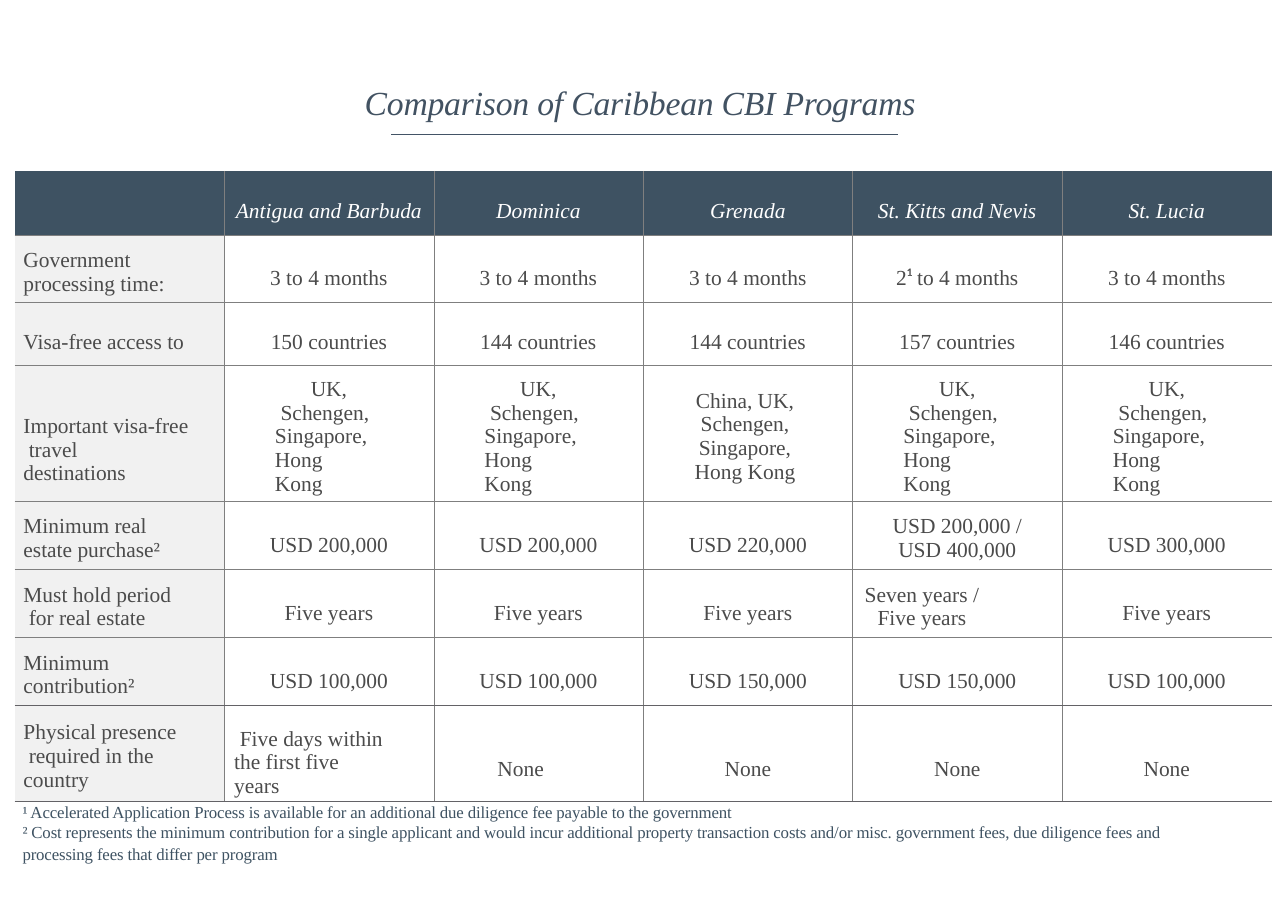
from dataclasses import dataclass
from typing import Optional

from lxml import etree
from pptx import Presentation
from pptx.dml.color import RGBColor
from pptx.enum.shapes import MSO_CONNECTOR
from pptx.enum.text import MSO_ANCHOR, MSO_AUTO_SIZE, PP_ALIGN
from pptx.oxml.ns import qn
from pptx.util import Cm, Pt

LEFT, CENTER = PP_ALIGN.LEFT, PP_ALIGN.CENTER
TOP, MIDDLE = MSO_ANCHOR.TOP, MSO_ANCHOR.MIDDLE
STRAIGHT = MSO_CONNECTOR.STRAIGHT
GROW = MSO_AUTO_SIZE.SHAPE_TO_FIT_TEXT

SERIF, SANS = "Times New Roman", "Calibri"
NAVY, SLATE, RULE = "3E5262", "425262", "435466"
WHITE, GREY, PALE = "FFFFFF", "4B4B4B", "F1F1F1"
GRID, DARK_GRID = "7F7F7F", "636266"


@dataclass(frozen=True)
class Style:
    size: float
    color: str
    italic: bool = False
    spacing: int = 0


@dataclass(frozen=True)
class Passage:
    text: str
    align: PP_ALIGN = CENTER
    margin: float = 0
    first_line: float = 0


@dataclass(frozen=True)
class Entry:
    passages: tuple[Passage, ...]
    lift: Optional[float] = None
    right: float = 0


@dataclass(frozen=True)
class Row:
    height: float
    lift: float
    label: str
    label_lift: float
    entries: tuple[Entry, ...]


TITLE_STYLE = Style(22, SLATE, True, -10)
HEADER_STYLE = Style(14, WHITE, True)
BODY_STYLE = Style(14, GREY)
NOTE_STYLE = Style(11, NAVY, spacing=-10)


def plain(*texts: str) -> tuple[Entry, ...]:
    return tuple(Entry((Passage(text),)) for text in texts)


ISLANDS = plain("Antigua and Barbuda", "Dominica", "Grenada", "St. Kitts and Nevis", "St. Lucia")
MONTHS = plain("3 to 4 months")
FIVE_YEARS = plain("Five years")
NONE = plain("None")
EUROPE_AND_ASIA = Entry((
    Passage("UK,"),
    Passage("Schengen,\nSingapore,\nHong\nKong", LEFT, 1.17, 0.13),
))
CHINA_TOO = Entry((Passage("China, UK,\nSchengen,\nSingapore,\nHong Kong", CENTER, 0.84),), right=0.97)

ROWS = (
    Row(1.47, 11.2, "", 0, ISLANDS),
    Row(1.56, 12.8, "Government\nprocessing time:", 4.4,
        MONTHS * 3 + (Entry((Passage("2¹ to 4 months"),), 12.2),) + MONTHS),
    Row(1.45, 10.7, "Visa-free access to", 10.7,
        plain("150 countries", "144 countries", "144 countries", "157 countries", "146 countries")),
    Row(3.13, 4.5, "Important visa-free\n travel\ndestinations", 22,
        (EUROPE_AND_ASIA,) * 2 + (CHINA_TOO,) + (EUROPE_AND_ASIA,) * 2),
    Row(1.57, 12.9, "Minimum real\nestate purchase²", 4.5,
        plain("USD 200,000", "USD 200,000", "USD 220,000")
        + (Entry((Passage("USD 200,000 /\nUSD 400,000"),), 4.5),) + plain("USD 300,000")),
    Row(1.57, 12.9, "Must hold period\n for real estate", 4.5,
        FIVE_YEARS * 3
        + (Entry((Passage("Seven years /\nFive years", CENTER, 0.25),), 4.5, 1.88),) + FIVE_YEARS),
    Row(1.57, 12.9, "Minimum\ncontribution²", 4.5,
        plain("USD 100,000", "USD 100,000", "USD 150,000", "USD 150,000", "USD 100,000")),
    Row(2.2, 20.7, "Physical presence\n required in the\ncountry", 3.8,
        (Entry((Passage("Five days within\nthe first five\nyears", LEFT, 0.23, 0.13),), 12.2),
         Entry((Passage("None", LEFT, 1.47),))) + NONE * 3),
)

NOTES = (
    "¹ Accelerated Application Process is available for an additional due diligence fee payable to the government",
    "² Cost represents the minimum contribution for a single applicant and would incur additional property "
    "transaction costs and/or misc. government fees, due diligence fees and",
    "processing fees that differ per program",
)


def rgb(color: str) -> RGBColor:
    return RGBColor.from_string(color)


def add_run(paragraph, text: str, style: Style, font_name: str = SERIF) -> None:
    run = paragraph.add_run()
    run.text = text
    run.font.name = font_name
    run.font.size = Pt(style.size)
    run.font.italic = style.italic
    run.font.color.rgb = rgb(style.color)
    if style.spacing:
        run.font._element.set("spc", str(style.spacing))


def write_passage(paragraph, passage: Passage, style: Style) -> None:
    paragraph.alignment = passage.align
    properties = paragraph._p.get_or_add_pPr()
    properties.set("marL", str(Cm(passage.margin)))
    properties.set("indent", str(Cm(passage.first_line)))
    for number, line in enumerate(passage.text.split("\n")):
        if number:
            paragraph.add_line_break()
        before, mark, after = line.partition("¹ ")
        if before and mark:
            add_run(paragraph, before, style)
            add_run(paragraph, mark, style, SANS)
            add_run(paragraph, after, style)
        else:
            add_run(paragraph, line, style)
    for line_break in paragraph._p.findall(qn("a:br")):
        etree.SubElement(line_break, qn("a:rPr"), sz=str(int(style.size * 100)))


def write_passages(frame, passages: tuple[Passage, ...], style: Style) -> None:
    for number, passage in enumerate(passages):
        paragraph = frame.add_paragraph() if number else frame.paragraphs[0]
        write_passage(paragraph, passage, style)


def add_border(cell, side: str, color: Optional[str], width: float) -> None:
    line = etree.SubElement(cell._tc.get_or_add_tcPr(), qn(f"a:ln{side}"), w=str(Pt(width)))
    if color is None:
        etree.SubElement(line, qn("a:noFill"))
    else:
        fill = etree.SubElement(line, qn("a:solidFill"))
        etree.SubElement(fill, qn("a:srgbClr"), val=color)


def draw_borders(cell, row: int, column: int) -> None:
    last_row, last_column = len(ROWS) - 1, len(ISLANDS)
    thin, strong, blank = (GRID, 0.25), (DARK_GRID, 1), (None, 0)
    add_border(cell, "L", *(thin if column else blank))
    add_border(cell, "R", *(thin if column < last_column else blank))
    add_border(cell, "T", *(strong if row == last_row else thin if row else blank))
    add_border(cell, "B", *(strong if row >= last_row - 1 else thin))


def clear_insets(frame) -> None:
    frame.margin_left = frame.margin_top = frame.margin_right = frame.margin_bottom = 0
    frame.word_wrap = True
    frame.auto_size = GROW
    frame.vertical_anchor = TOP


def draw_table(slide) -> None:
    column_width = 4.83
    columns = len(ISLANDS) + 1
    programs = slide.shapes.add_table(
        len(ROWS), columns, Cm(0.34), Cm(3.94),
        Cm(column_width * columns), Cm(sum(row.height for row in ROWS))).table
    programs.first_row = programs.horz_banding = False
    for column in programs.columns:
        column.width = Cm(column_width)
    for r, row in enumerate(ROWS):
        programs.rows[r].height = Cm(row.height)
        label = Entry((Passage(row.label, LEFT, 0.2),) if row.label else (), row.label_lift)
        for c, entry in enumerate((label,) + row.entries):
            cell = programs.cell(r, c)
            cell.vertical_anchor = MIDDLE
            cell.margin_left = cell.margin_bottom = 0
            cell.margin_right = Cm(entry.right)
            cell.margin_top = Pt(row.lift if entry.lift is None else entry.lift)
            draw_borders(cell, r, c)
            cell.fill.solid()
            cell.fill.fore_color.rgb = rgb(WHITE if r and c else PALE if r else NAVY)
            write_passages(cell.text_frame, entry.passages, BODY_STYLE if r else HEADER_STYLE)


def draw_title(slide) -> None:
    title = slide.shapes.title
    title.left, title.top, title.width, title.height = Cm(8.38), Cm(1.88), Cm(13), Cm(0.94)
    clear_insets(title.text_frame)
    write_passages(title.text_frame, (Passage("Comparison of Caribbean CBI Programs", LEFT, 0.03),), TITLE_STYLE)
    underline = slide.shapes.add_connector(STRAIGHT, Cm(9.02), Cm(3.1), Cm(20.7), Cm(3.1))
    underline.line.color.rgb = rgb(RULE)
    underline.line.width = Pt(0.5)
    etree.SubElement(underline._element.spPr, qn("a:effectLst"))


def draw_notes(slide) -> None:
    frame = slide.shapes.add_textbox(Cm(0.49), Cm(18.49), Cm(26.44), Cm(1.45)).text_frame
    clear_insets(frame)
    write_passages(frame, tuple(Passage(note, LEFT, 0.03) for note in NOTES), NOTE_STYLE)
    for paragraph in frame.paragraphs[:2]:
        paragraph.line_spacing = Pt(13.1)
    frame.paragraphs[2].space_before = Pt(0.8)


def main() -> None:
    deck = Presentation()
    deck.slide_width, deck.slide_height = Cm(29.7), Cm(21)
    slide = deck.slides.add_slide(deck.slide_layouts[5])
    draw_title(slide)
    draw_table(slide)
    draw_notes(slide)
    deck.save("out.pptx")


if __name__ == "__main__":
    main()
